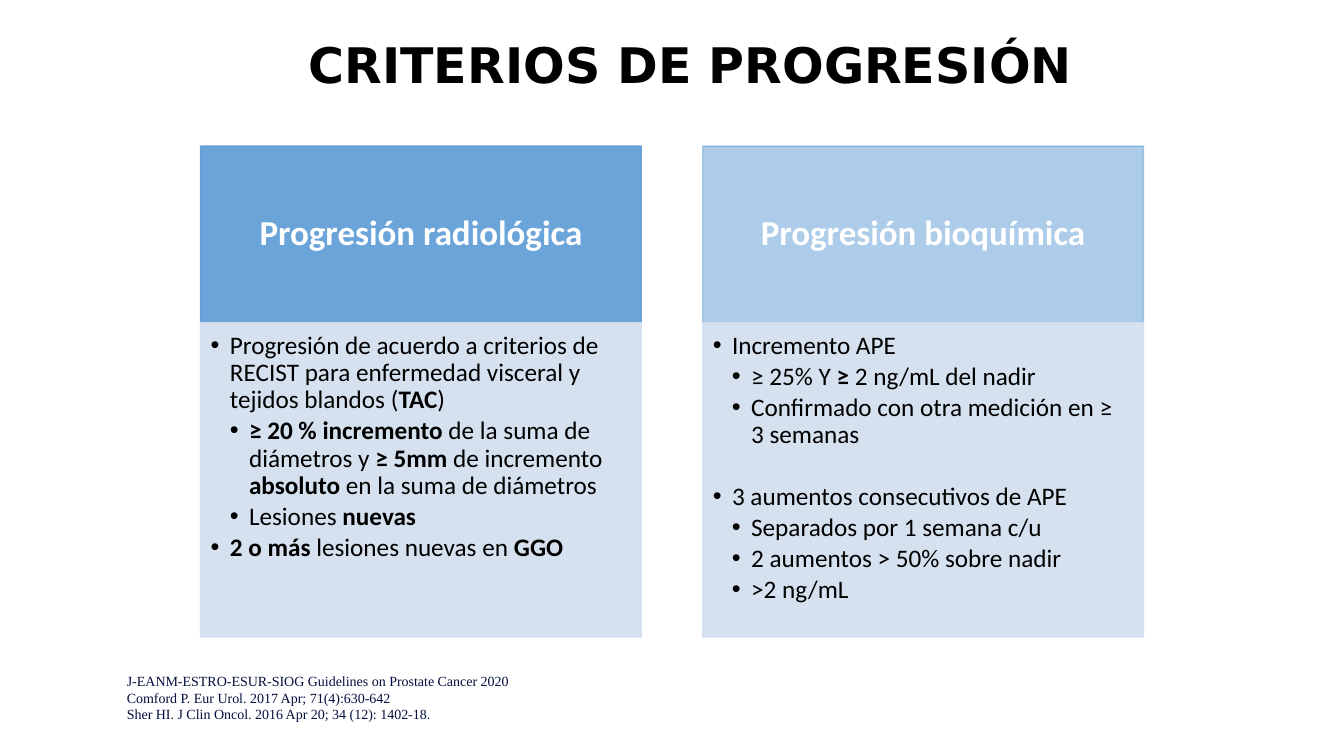
from pptx import Presentation
from pptx.dml.color import RGBColor
from pptx.enum.text import MSO_ANCHOR as Anchor, MSO_AUTO_SIZE as AutoSize, PP_ALIGN as Align
from pptx.oxml.ns import qn
from pptx.util import Inches, Pt
from lxml.etree import SubElement

BLACK = RGBColor(0x00, 0x00, 0x00)
WHITE = RGBColor(0xFF, 0xFF, 0xFF)
BLUE = RGBColor(0x5B, 0x9B, 0xD5)
PALE_BLUE = RGBColor(0xD2, 0xDE, 0xEF)
NAVY = RGBColor(0x05, 0x10, 0x3E)

COLUMN_LEFT, COLUMN_PITCH, COLUMN_WIDTH = 1.99, 4.98, 4.37
HEADING_TOP, HEADING_HEIGHT = 1.45, 1.75
LIST_TOP, LIST_HEIGHT = HEADING_TOP + HEADING_HEIGHT, 3.12
INDENT = 0.19
GROUP_GAP = 22

# Each column: heading, heading opacity, items as (level, text, points before).
# Text between ** marks is bold.
COLUMNS = [
    ("Progresión radiológica", 90, [
        (0, "Progresión de acuerdo a criterios de RECIST para enfermedad "
            "visceral y tejidos blandos (**TAC**)", 0),
        (1, "**≥ 20 % incremento **de la suma de diámetros y **≥ 5mm **"
            "de incremento **absoluto **en la suma de diámetros", 0),
        (1, "Lesiones **nuevas**", 0),
        (0, "**2 o más **lesiones nuevas en **GGO**", 0),
    ]),
    ("Progresión bioquímica", 50, [
        (0, "Incremento APE", 0),
        (1, "≥ 25% Y **≥ **2 ng/mL del nadir", 0),
        (1, "Confirmado con otra medición en ≥ 3 semanas", 0),
        (0, "3 aumentos consecutivos de APE", GROUP_GAP),
        (1, "Separados por 1 semana c/u", 0),
        (1, "2 aumentos > 50% sobre nadir", 0),
        (1, ">2 ng/mL", 0),
    ]),
]
REFERENCES = [
    "J-EANM-ESTRO-ESUR-SIOG Guidelines on Prostate Cancer 2020",
    "Comford P. Eur Urol. 2017 Apr; 71(4):630-642",
    "Sher HI. J Clin Oncol. 2016 Apr 20; 34 (12): 1402-18.",
]


def place(shape, left, top, width, height):
    shape.left, shape.top = Inches(left), Inches(top)
    shape.width, shape.height = Inches(width), Inches(height)


def paint(shape, color, opacity):
    """Give the shape one translucent colour for fill and outline."""
    shape.fill.solid()
    shape.fill.fore_color.rgb = color
    shape.line.color.rgb = color
    shape.line.width = Pt(1)
    for element in list(shape._element.spPr.iter(qn("a:srgbClr"))):
        SubElement(element, qn("a:alpha"), val=str(opacity * 1000))


def set_frame(shape, anchor, insets):
    frame = shape.text_frame
    frame.word_wrap = True
    frame.auto_size = AutoSize.NONE
    frame.vertical_anchor = anchor
    (frame.margin_left, frame.margin_top,
     frame.margin_right, frame.margin_bottom) = map(Inches, insets)
    return frame


def paragraph_at(frame, index):
    return frame.add_paragraph() if index else frame.paragraphs[0]


def set_spacing(paragraph, line=0.9, before=0, after=0):
    paragraph.line_spacing = line
    paragraph.space_before, paragraph.space_after = Pt(before), Pt(after)


def add_runs(paragraph, text, font_name, size, color):
    for index, part in enumerate(text.split("**")):
        if part:
            run = paragraph.add_run()
            run.text = part
            font = run.font
            font.name, font.size, font.bold = font_name, Pt(size), index % 2 == 1
            font.color.rgb = color


def set_bullet(paragraph, level):
    paragraph.level = level
    properties = paragraph._p.get_or_add_pPr()
    properties.set("marL", str(Inches(INDENT * (level + 1))))
    properties.set("indent", str(-Inches(INDENT)))
    SubElement(properties, qn("a:buFont"), typeface="Arial")
    SubElement(properties, qn("a:buChar"), char="•")


def write_title(shape, text):
    place(shape, 2.96, 0.2, 8.8, 0.94)
    paragraph = set_frame(shape, Anchor.MIDDLE, (0.1, 0.05, 0.1, 0.05)).paragraphs[0]
    paragraph.alignment = Align.LEFT
    set_spacing(paragraph)
    add_runs(paragraph, f"**{text}**", "DejaVu Sans", 35, BLACK)


def write_heading(shape, left, text, opacity):
    place(shape, left, HEADING_TOP, COLUMN_WIDTH, HEADING_HEIGHT)
    paint(shape, BLUE, opacity)
    paragraph = set_frame(shape, Anchor.MIDDLE, (0.19, 0.11, 0.19, 0.11)).paragraphs[0]
    paragraph.alignment = Align.CENTER
    set_spacing(paragraph)
    add_runs(paragraph, f"**{text}**", "Calibri", 25, WHITE)


def write_list(shape, left, items):
    place(shape, left, LIST_TOP, COLUMN_WIDTH, LIST_HEIGHT)
    paint(shape, PALE_BLUE, 90)
    frame = set_frame(shape, Anchor.TOP, (0.1, 0.1, 0.14, 0.16))
    for index, (level, text, before) in enumerate(items):
        paragraph = paragraph_at(frame, index)
        set_bullet(paragraph, level)
        set_spacing(paragraph, before=before, after=2.7)
        add_runs(paragraph, text, "Calibri", 18, BLACK)


def add_references(slide, lines):
    box = slide.shapes.add_textbox(Inches(1.16), Inches(6.62), Inches(10.36), Inches(0.61))
    frame = set_frame(box, Anchor.TOP, (0.1, 0.05, 0.1, 0.05))
    for index, line in enumerate(lines):
        add_runs(paragraph_at(frame, index), line, "Times New Roman", 10, NAVY)


def main():
    presentation = Presentation()
    presentation.slide_width, presentation.slide_height = Inches(13.33), Inches(7.5)
    comparison_layout = presentation.slide_layouts[4]
    slide = presentation.slides.add_slide(comparison_layout)

    title, *bodies = slide.placeholders
    write_title(title, "CRITERIOS DE PROGRESIÓN")
    for index, (heading, opacity, items) in enumerate(COLUMNS):
        left = COLUMN_LEFT + index * COLUMN_PITCH
        write_heading(bodies[2 * index], left, heading, opacity)
        write_list(bodies[2 * index + 1], left, items)
    add_references(slide, REFERENCES)
    presentation.save("out.pptx")


if __name__ == "__main__":
    main()
